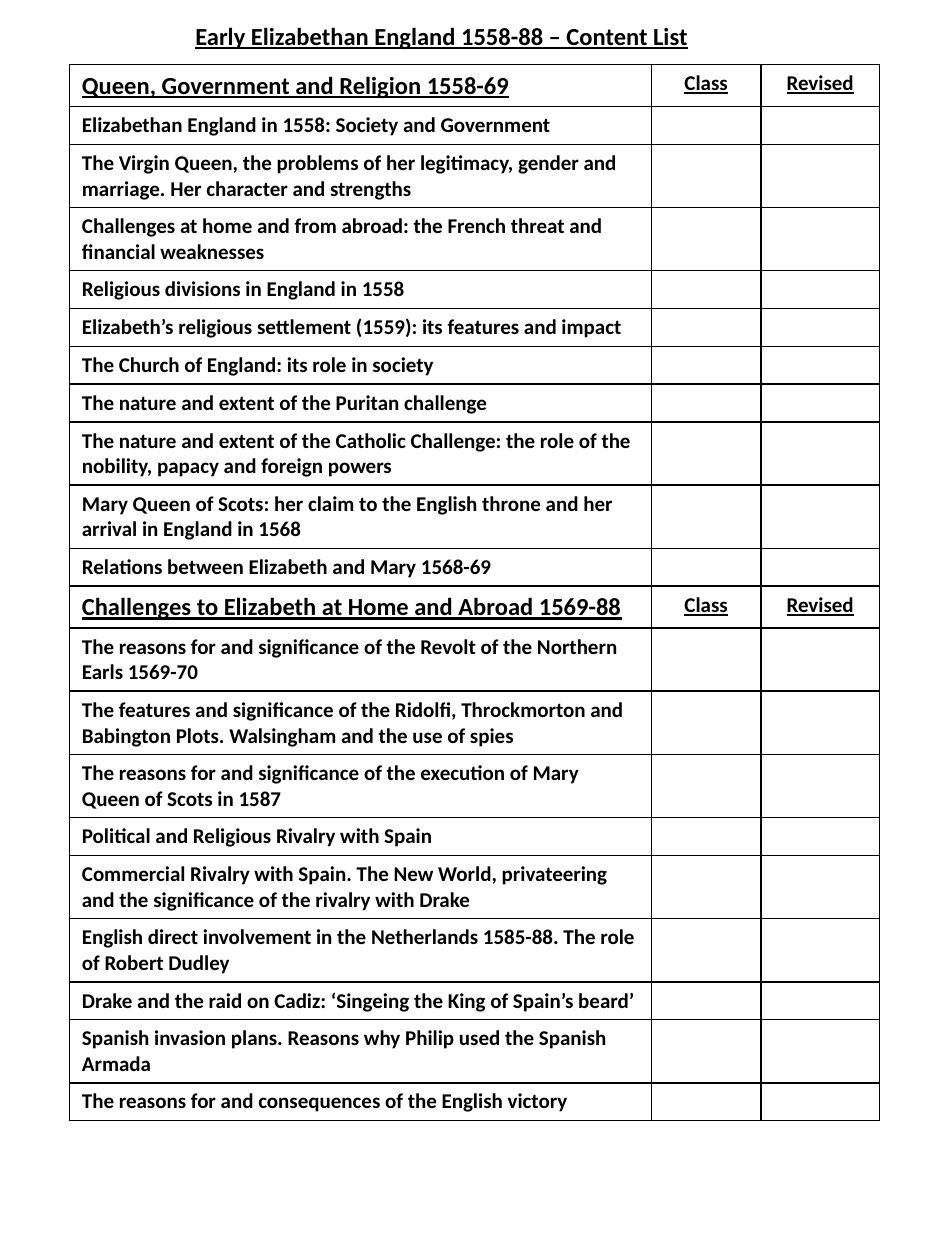
from pptx import Presentation
from pptx import util as u
from pptx.dml.color import RGBColor
from pptx.enum import text
from lxml import etree
from pptx.oxml import ns

WIDE, HIGH = 7.5, 10
COLS = [4.62, 0.87, 0.94]
HEAD, ONE, TWO = 0.33, 0.3, 0.5  # row heights: heading, one line, two lines
LINE = 65  # characters that fit on one line of a topic

UNITS = {
    "Queen, Government and Religion 1558-69": [
        "Elizabethan England in 1558: Society and Government",
        "The Virgin Queen, the problems of her legitimacy, gender and marriage. Her character and strengths",
        "Challenges at home and from abroad: the French threat and financial weaknesses",
        "Religious divisions in England in 1558",
        "Elizabeth’s religious settlement (1559): its features and impact",
        "The Church of England: its role in society",
        "The nature and extent of the Puritan challenge",
        "The nature and extent of the Catholic Challenge: the role of the nobility, papacy and foreign powers",
        "Mary Queen of Scots: her claim to the English throne and her arrival in England in 1568",
        "Relations between Elizabeth and Mary 1568-69",
    ],
    "Challenges to Elizabeth at Home and Abroad 1569-88": [
        "The reasons for and significance of the Revolt of the Northern Earls 1569-70",
        "The features and significance of the Ridolfi, Throckmorton and Babington Plots. "
        "Walsingham and the use of spies",
        "The reasons for and significance of the execution of Mary Queen of Scots in 1587",
        "Political and Religious Rivalry with Spain",
        "Commercial Rivalry with Spain. The New World, privateering and the significance of the rivalry with Drake",
        "English direct involvement in the Netherlands 1585-88. The role of Robert Dudley",
        "Drake and the raid on Cadiz: ‘Singeing the King of Spain’s beard’",
        "Spanish invasion plans. Reasons why Philip used the Spanish Armada",
        "The reasons for and consequences of the English victory",
    ],
}


def paint(code):
    return RGBColor.from_string(code)


def style(para, size, under=False):
    for run in para.runs:
        font = run.font
        font.name, font.size = "Calibri", u.Pt(size)
        font.bold, font.underline = True, under
        font.color.rgb = paint("000000")


def border(cell):
    props = cell._tc.get_or_add_tcPr()
    for i, side in enumerate(("lnL", "lnR", "lnT", "lnB")):
        line = etree.Element(ns.qn("a:" + side), w=str(u.Pt(1)))
        fill = etree.SubElement(line, ns.qn("a:solidFill"))
        etree.SubElement(fill, ns.qn("a:srgbClr"), val="000000")
        props.insert(i, line)


def write(cell, words, size, under, align):
    cell.fill.background()
    cell.margin_bottom = u.Pt(3.25)
    border(cell)
    para = cell.text_frame.paragraphs[0]
    para.alignment = align
    if words:
        para.text = words
        style(para, size, under)
    else:  # keeps an empty cell as low as its row
        etree.SubElement(para._p, ns.qn("a:endParaRPr"), sz=str(size * 100))


def add_title(slide, words):
    title = slide.shapes.title
    title.left, title.top = u.Inches(1.45), u.Pt(8.3)
    title.width, title.height = u.Inches(4.14), u.Inches(0.34)
    frame = title.text_frame
    frame.text = words
    frame.word_wrap = False
    frame.auto_size = text.MSO_AUTO_SIZE.NONE
    frame.vertical_anchor = text.MSO_ANCHOR.TOP
    frame.paragraphs[0].alignment = text.PP_ALIGN.LEFT
    style(frame.paragraphs[0], 14, True)


def add_list(slide):
    # Each row: its three texts, whether it is a heading, its height
    rows = []
    for unit, topics in UNITS.items():
        rows.append(((unit, "Class", "Revised"), True, HEAD))
        rows += [((t, "", ""), False, TWO if len(t) > LINE else ONE) for t in topics]

    tall = sum(row[2] for row in rows)
    table = slide.shapes.add_table(
        len(rows), len(COLS), u.Inches(0.55), u.Pt(37),
        u.Inches(sum(COLS)), u.Inches(tall)).table
    table.first_row = table.horz_banding = False
    for col, width in zip(table.columns, COLS):
        col.width = u.Inches(width)
    for row, (words, head, height) in zip(table.rows, rows):
        row.height = u.Inches(height)
        for i, cell in enumerate(row.cells):
            size = 14 if head and i == 0 else 12
            align = text.PP_ALIGN.CENTER if i else text.PP_ALIGN.LEFT
            write(cell, words[i], size, head, align)


def main():
    deck = Presentation()
    deck.slide_width, deck.slide_height = u.Inches(WIDE), u.Inches(HIGH)
    slide = deck.slides.add_slide(deck.slide_layouts[5])
    add_title(slide, "Early Elizabethan England 1558-88 – Content List")
    add_list(slide)
    deck.save("out.pptx")


if __name__ == "__main__":
    main()
